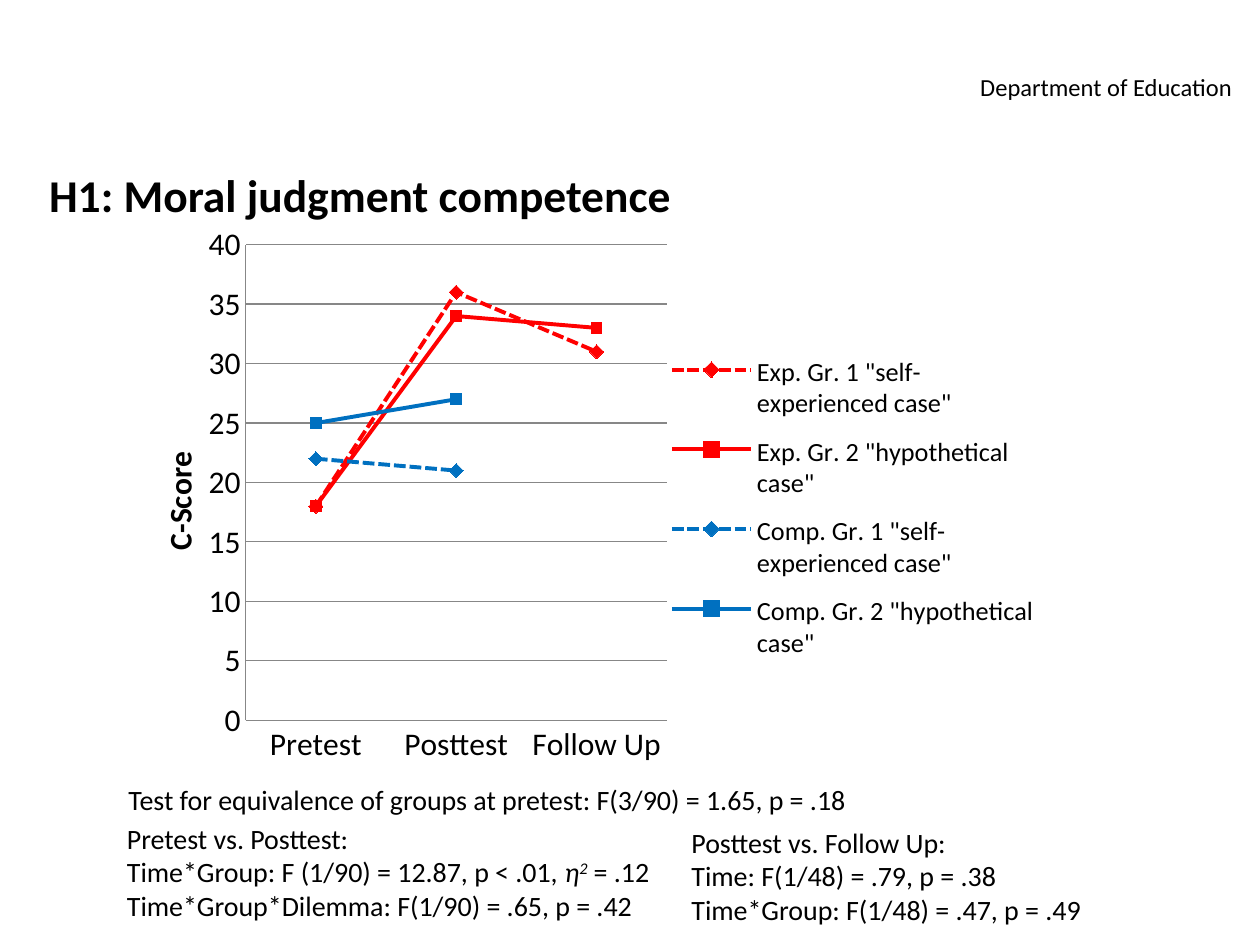
from dataclasses import dataclass

from lxml import etree
from pptx import Presentation
from pptx import util as u
from pptx.chart import data as cd
from pptx.dml.color import RGBColor
from pptx.enum import chart as ec, dml, text
from pptx.oxml import ns


@dataclass(frozen=True)
class Theme:
    font: str = "Calibri"
    ink: RGBColor = RGBColor(0, 0, 0)
    red: RGBColor = RGBColor(255, 0, 0)
    blue: RGBColor = RGBColor(0, 0x70, 0xC0)
    head: int = 26
    axis: int = 18
    note: int = 16
    key: int = 15
    dept: int = 14


th = Theme()


def style(font, size, bold=False):
    font.name, font.size, font.bold = th.font, u.Pt(size), bold
    font.color.rgb = th.ink


def place(part, **vals):
    """Fix a chart part at fractions of the chart area."""
    lay = part.find(ns.qn("c:layout"))
    if lay is None:
        lay = etree.Element(ns.qn("c:layout"))
        prior = [e for e in part if e.tag in (ns.qn("c:tx"), ns.qn("c:legendPos"))]
        part.insert(part.index(prior[-1]) + 1 if prior else 0, lay)
    for kid in list(lay):
        lay.remove(kid)
    man = etree.SubElement(lay, ns.qn("c:manualLayout"))
    for tag, val in vals.items():
        etree.SubElement(man, ns.qn("c:" + tag)).set("val", str(val))


prs = Presentation()
prs.slide_width, prs.slide_height = u.Cm(25.4), u.Cm(19.05)
slide = prs.slides.add_slide(prs.slide_layouts[6])

# Line chart
data = cd.CategoryChartData()
data.categories = ["Pretest", "Posttest", "Follow Up"]
groups = [
    ('Exp. Gr. 1 "self-experienced case"', (18, 36, 31), th.red, True),
    ('Exp. Gr. 2 "hypothetical case"', (18, 34, 33), th.red, False),
    ('Comp. Gr. 1 "self-experienced case"', (22, 21, None), th.blue, True),
    ('Comp. Gr. 2 "hypothetical case"', (25, 27, None), th.blue, False),
]
for name, vals, hue, dash in groups:
    data.add_series(name, vals)
chart = slide.shapes.add_chart(
    ec.XL_CHART_TYPE.LINE_MARKERS,
    u.Cm(2.31), u.Cm(4.37), u.Cm(18.87), u.Cm(11.28), data).chart
style(chart.font, th.axis)
chart.has_title = False
chart.plots[0].vary_by_categories = False

# Series looks
for line, (name, vals, hue, dash) in zip(chart.plots[0].series, groups):
    line.smooth = False
    line.format.line.color.rgb = hue
    mark = line.marker
    mark.style = ec.XL_MARKER_STYLE.DIAMOND if dash else ec.XL_MARKER_STYLE.SQUARE
    mark.size = 8 if dash else 6
    mark.format.fill.solid()
    mark.format.fill.fore_color.rgb = hue
    if dash:
        line.format.line.dash_style = dml.MSO_LINE.SQUARE_DOT
        mark.format.line.fill.background()
    else:
        mark.format.line.color.rgb = hue

# Axes
cat, val = chart.category_axis, chart.value_axis
for axis in (cat, val):
    axis.major_tick_mark = axis.minor_tick_mark = ec.XL_TICK_MARK.NONE
val.minimum_scale, val.maximum_scale, val.major_unit = 0, 40, 5
val.has_major_gridlines = True
title = val.axis_title
title.text_frame.text = "C-Score"
style(title.text_frame.paragraphs[0].runs[0].font, th.axis, True)

# Legend and layout
chart.has_legend = True
key = chart.legend
key.position = ec.XL_LEGEND_POSITION.RIGHT
key.include_in_layout = False
style(key.font, th.key)
area = chart.plots[0]._element.getparent()
place(area, layoutTarget="inner", xMode="edge", yMode="edge",
      x=0.14, y=0.05, w=0.45, h=0.85)
place(key._element, xMode="edge", yMode="edge", x=0.61, y=0.22, w=0.39, h=0.6)
place(title._element, xMode="edge", yMode="edge", x=0.04, y=0.41)

# Text boxes: left, top, width, height, size, lines of runs
boxes = [
    (19.2, 1.32, 6.2, 0.91, th.dept, [["Department of Education"]]),
    (2.31, 16.43, 22, 2.31, th.note, [
        ["Pretest vs. Posttest:"],
        ["Time*Group: F (1/90) = 12.87, p < .01, ", "η", "2", " = .12"],
        ["Time*Group*Dilemma: F(1/90) = .65, p = .42"]]),
    (2.34, 15.65, 15.39, 0.94, th.note, [
        ["Test for equivalence of groups at pretest: F(3/90) = 1.65, p = .18"]]),
    (0.74, 3.25, 19.99, 1.37, th.head, [["H1: Moral judgment competence"]]),
    (13.69, 16.51, 11.2, 2.31, th.note, [
        ["Posttest vs. Follow Up:"],
        ["Time: F(1/48) = .79, p = .38"],
        ["Time*Group: F(1/48) = .47, p = .49"]]),
]
for left, top, wide, high, size, lines in boxes:
    box = slide.shapes.add_textbox(u.Cm(left), u.Cm(top), u.Cm(wide), u.Cm(high))
    frame = box.text_frame
    frame.word_wrap = True
    for i, parts in enumerate(lines):
        para = frame.add_paragraph() if i else frame.paragraphs[0]
        if size == th.dept:
            para.alignment = text.PP_ALIGN.CENTER
        for part in parts:
            run = para.add_run()
            run.text = part
            style(run.font, size, size == th.head)
            if part in ("η", "2"):
                run.font.italic = True
            if part == "2":
                run.font._element.set("baseline", "30000")

prs.save("out.pptx")
